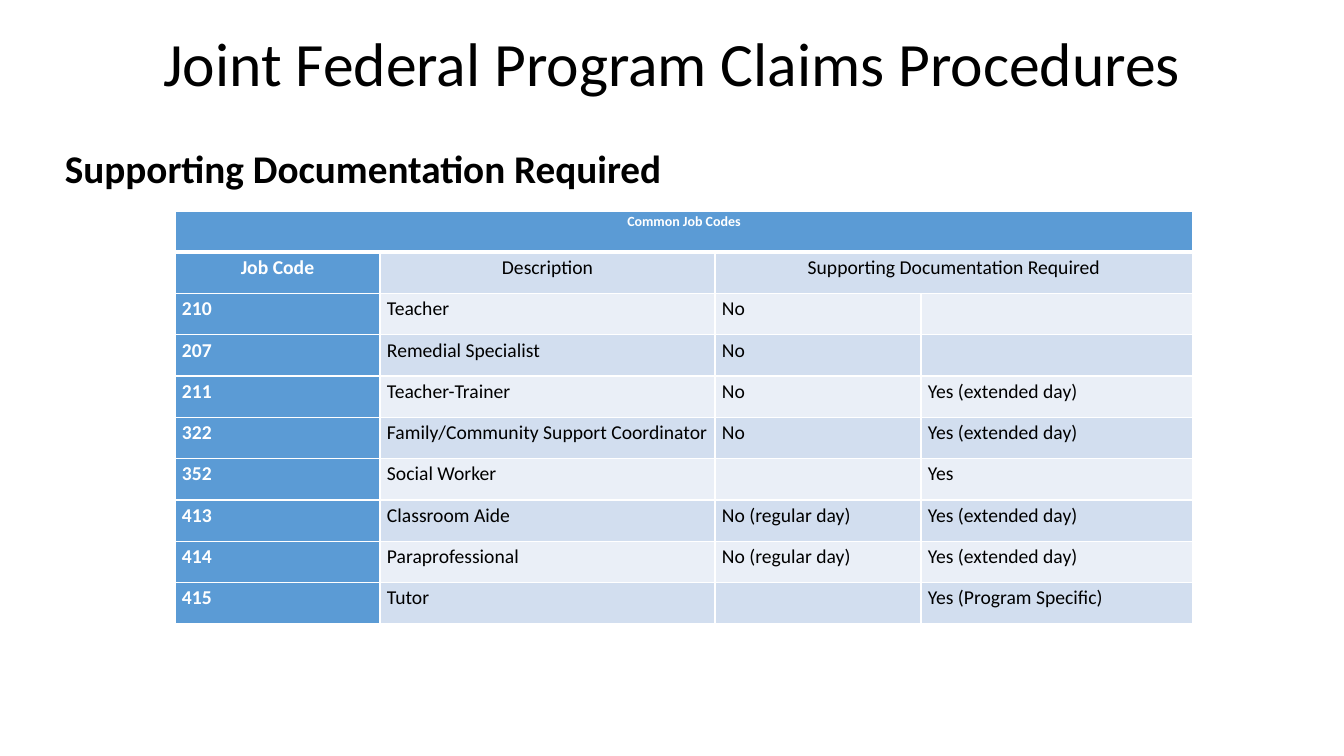
from lxml.etree import SubElement
from pptx import Presentation
from pptx.dml.color import RGBColor
from pptx.enum.text import MSO_ANCHOR, PP_ALIGN
from pptx.oxml.ns import qn
from pptx.util import Emu, Pt

COLORS = {
    "black": "000000",
    "white": "FFFFFF",
    "blue": "5B9BD5",
    "band_dark": "D2DEEF",
    "band_light": "EAEFF7",
}
SLIDE_SIZE = (1344, 756)
TITLE_BOX = (93, 14, 1159, 105)
SUBTITLE_BOX = (55, 145, 1231, 509)
TABLE_BOX = (175, 211, 1018, 413)
COLUMN_WIDTHS = (205, 335, 206, 272)
JOB_CODES = [
    ("Common Job Codes", "", "", ""),
    ("Job Code", "Description", "Supporting Documentation Required", ""),
    ("210", "Teacher", "No", ""),
    ("207", "Remedial Specialist", "No", ""),
    ("211", "Teacher-Trainer", "No", "Yes (extended day)"),
    ("322", "Family/Community Support Coordinator", "No", "Yes (extended day)"),
    ("352", "Social Worker", "", "Yes"),
    ("413", "Classroom Aide", "No (regular day)", "Yes (extended day)"),
    ("414", "Paraprofessional", "No (regular day)", "Yes (extended day)"),
    ("415", "Tutor", "", "Yes (Program Specific)"),
]


def px(length):
    return Emu(round(length * 914400 / 100.8))


def write(frame, text, size=14, color="black", bold=False,
          align=PP_ALIGN.LEFT, spacing=0.9):
    frame.word_wrap = True
    para = frame.paragraphs[0]
    para.alignment = align
    para.line_spacing = spacing
    if text:
        span = para.add_run()
        span.text = text
        span.font.name = "Calibri"
        span.font.size = Pt(size)
        span.font.bold = bold
        span.font.color.rgb = RGBColor.from_string(COLORS[color])


def add_title(page, box):
    title = page.shapes.title
    title.left, title.top, title.width, title.height = map(px, box)
    title.text_frame.vertical_anchor = MSO_ANCHOR.MIDDLE
    write(title.text_frame, "Joint Federal Program Claims Procedures",
          size=44, align=PP_ALIGN.CENTER)


def add_subtitle(page, box):
    subtitle = page.shapes.add_textbox(*map(px, box))
    write(subtitle.text_frame, "Supporting Documentation Required",
          size=28, bold=True)


def add_borders(cell, row):
    properties = cell._tc.get_or_add_tcPr()
    widths = {"lnL": 1, "lnR": 1, "lnT": 3 if row == 1 else 1,
              "lnB": 3 if row == 0 else 1}
    for side, width in widths.items():
        line = SubElement(properties, qn(f"a:{side}"), w=str(Pt(width)))
        fill = SubElement(line, qn("a:solidFill"))
        SubElement(fill, qn("a:srgbClr"), val=COLORS["white"])


def format_cell(cell, text, row, column):
    heading = row == 0 or column == 0
    band = "band_dark" if row % 2 else "band_light"
    cell.margin_left = cell.margin_right = px(7)
    cell.margin_top = cell.margin_bottom = 0
    add_borders(cell, row)
    cell.fill.solid()
    cell.fill.fore_color.rgb = RGBColor.from_string(
        COLORS["blue" if heading else band])
    write(cell.text_frame, text, size=10 if row == 0 else 14,
          color="white" if heading else "black", bold=heading,
          align=PP_ALIGN.CENTER if row < 2 else PP_ALIGN.LEFT, spacing=1.15)


def add_job_codes(page, box):
    table = page.shapes.add_table(
        len(JOB_CODES), len(COLUMN_WIDTHS), *map(px, box)).table
    for column, width in zip(table.columns, COLUMN_WIDTHS):
        column.width = px(width)
    for row, texts in enumerate(JOB_CODES):
        for column, text in enumerate(texts):
            format_cell(table.cell(row, column), text, row, column)
    table.cell(0, 0).merge(table.cell(0, 3))
    table.cell(1, 2).merge(table.cell(1, 3))


def main():
    deck = Presentation()
    deck.slide_width, deck.slide_height = map(px, SLIDE_SIZE)
    page = deck.slides.add_slide(deck.slide_layouts[5])
    add_title(page, TITLE_BOX)
    add_subtitle(page, SUBTITLE_BOX)
    add_job_codes(page, TABLE_BOX)
    deck.save("out.pptx")


if __name__ == "__main__":
    main()
